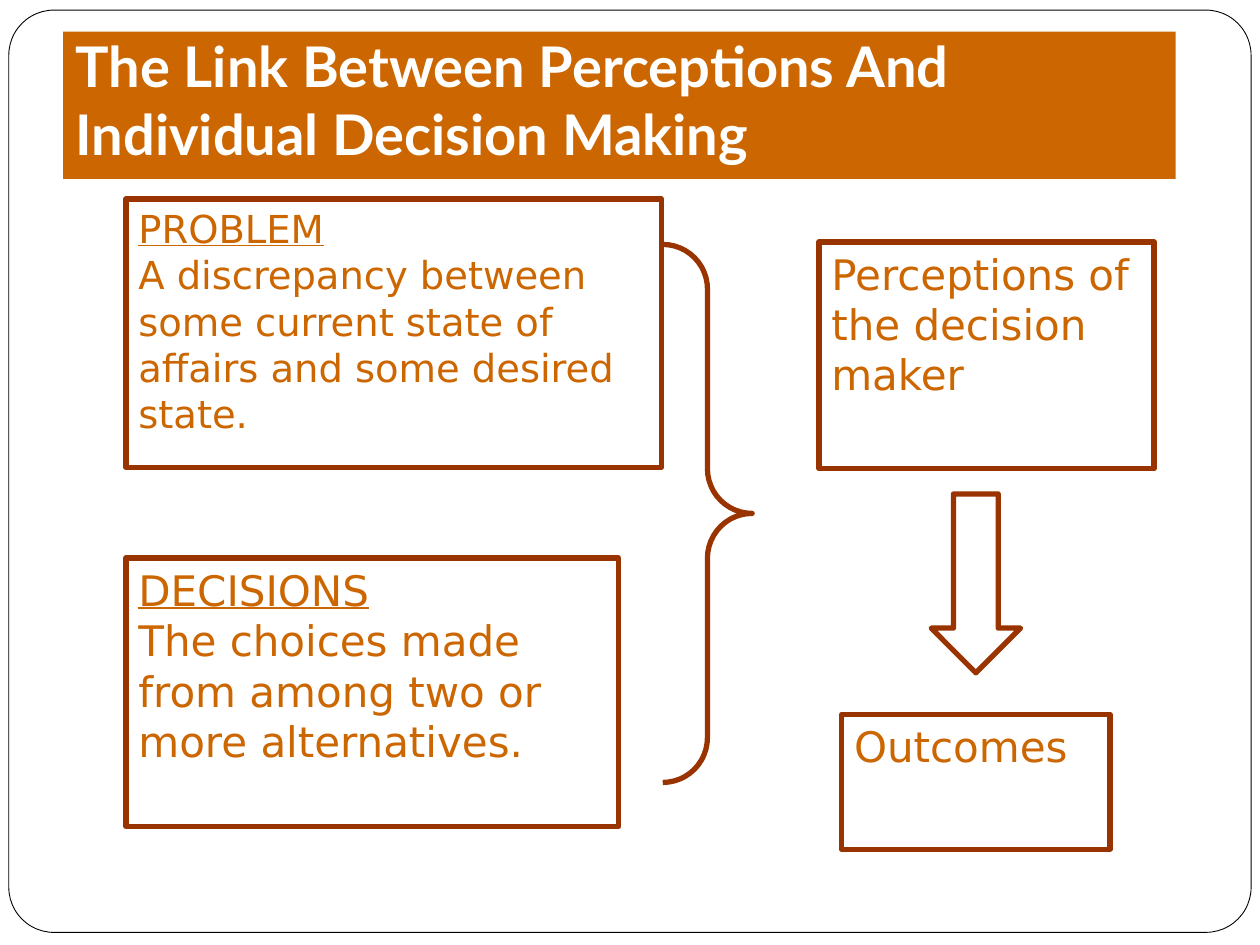
import pptx
import pptx.util
import pptx.dml.color
import pptx.enum.shapes
import pptx.enum.text

WIDTH, HEIGHT = 10, 7.5
ORANGE, BROWN, WHITE, BLACK = "CC6600", "993300", "FFFFFF", "000000"
KIND = pptx.enum.shapes.MSO_SHAPE
ANCHOR = pptx.enum.text.MSO_ANCHOR
inches = pptx.util.Inches


def color(value):
    return pptx.dml.color.RGBColor.from_string(value)


def place(shape, left, top, width, height):
    shape.left, shape.top = inches(left), inches(top)
    shape.width, shape.height = inches(width), inches(height)


def write(shape, paragraphs, size, font="DejaVu Sans", ink=ORANGE, bold=False,
          underline_first=False, anchor=ANCHOR.TOP, bottom=0.05):
    """Fill a shape with left-aligned paragraphs in one format."""
    frame = shape.text_frame
    frame.word_wrap = True
    frame.auto_size = pptx.enum.text.MSO_AUTO_SIZE.NONE
    frame.vertical_anchor = anchor
    frame.margin_left = frame.margin_right = inches(0.1)
    frame.margin_top, frame.margin_bottom = inches(0.05), inches(bottom)
    for index, text in enumerate(paragraphs):
        para = frame.add_paragraph() if index else frame.paragraphs[0]
        para.alignment = pptx.enum.text.PP_ALIGN.LEFT
        span = para.add_run()
        span.text = text
        span.font.name, span.font.size = font, pptx.util.Pt(size)
        span.font.color.rgb = color(ink)
        span.font.bold = bold
        span.font.underline = underline_first and index == 0


def add_outline(page, kind, area, fill=WHITE, line=BROWN, weight=3, adjust=()):
    """Add a preset shape with an outline; fill=None leaves it open."""
    shape = page.shapes.add_shape(kind, 0, 0, 0, 0)
    place(shape, *area)
    shape.shadow.inherit = False
    if fill:
        shape.fill.solid()
        shape.fill.fore_color.rgb = color(fill)
    else:
        shape.fill.background()
    shape.line.color.rgb = color(line)
    shape.line.width = pptx.util.Pt(weight)
    for index, value in enumerate(adjust):
        shape.adjustments[index] = value
    return shape


def add_box(page, area, paragraphs, size=24):
    box = add_outline(page, KIND.RECTANGLE, area)
    write(box, paragraphs, size, underline_first=len(paragraphs) > 1)


def add_title(page, text):
    title = page.shapes.title
    place(title, 0.5, 0.25, 8.83, 1.17)
    title.fill.solid()
    title.fill.fore_color.rgb = color(ORANGE)
    write(title, [text], 32, font="Lato", ink=WHITE, bold=True,
          anchor=ANCHOR.BOTTOM, bottom=0.1)
    return title


def main():
    deck = pptx.Presentation()
    deck.slide_width, deck.slide_height = inches(WIDTH), inches(HEIGHT)
    page = deck.slides.add_slide(deck.slide_layouts[5])

    # Title band, with the rounded page border behind it
    title = add_title(
        page, "The Link Between Perceptions And Individual Decision Making")
    border = add_outline(page, KIND.ROUNDED_RECTANGLE,
                         (0.07, 0.08, WIDTH - 0.14, 7.32),
                         line=BLACK, weight=0.5, adjust=[0.049])
    title.element.addprevious(border.element)

    # Left column: what leads to a decision, gathered by a brace
    add_box(page, (1, 1.58, 4.25, 2.13),
            ["PROBLEM", "A discrepancy between some current state of affairs "
             "and some desired state."], size=22)
    add_box(page, (1, 4.43, 3.91, 2.13),
            ["DECISIONS",
             "The choices made from among two or more alternatives."])
    add_outline(page, KIND.RIGHT_BRACE, (5.26, 1.94, 0.71, 4.27),
                fill=None, adjust=[0.5, 0.5])

    # Right column: perceptions lead down to outcomes
    add_box(page, (6.5, 1.92, 2.66, 1.8), ["Perceptions of the decision maker"])
    add_outline(page, KIND.DOWN_ARROW, (7.39, 3.92, 0.71, 1.42),
                adjust=[0.5, 0.5])
    add_box(page, (6.68, 5.67, 2.13, 1.07), ["Outcomes"])

    deck.save("out.pptx")


if __name__ == "__main__":
    main()
